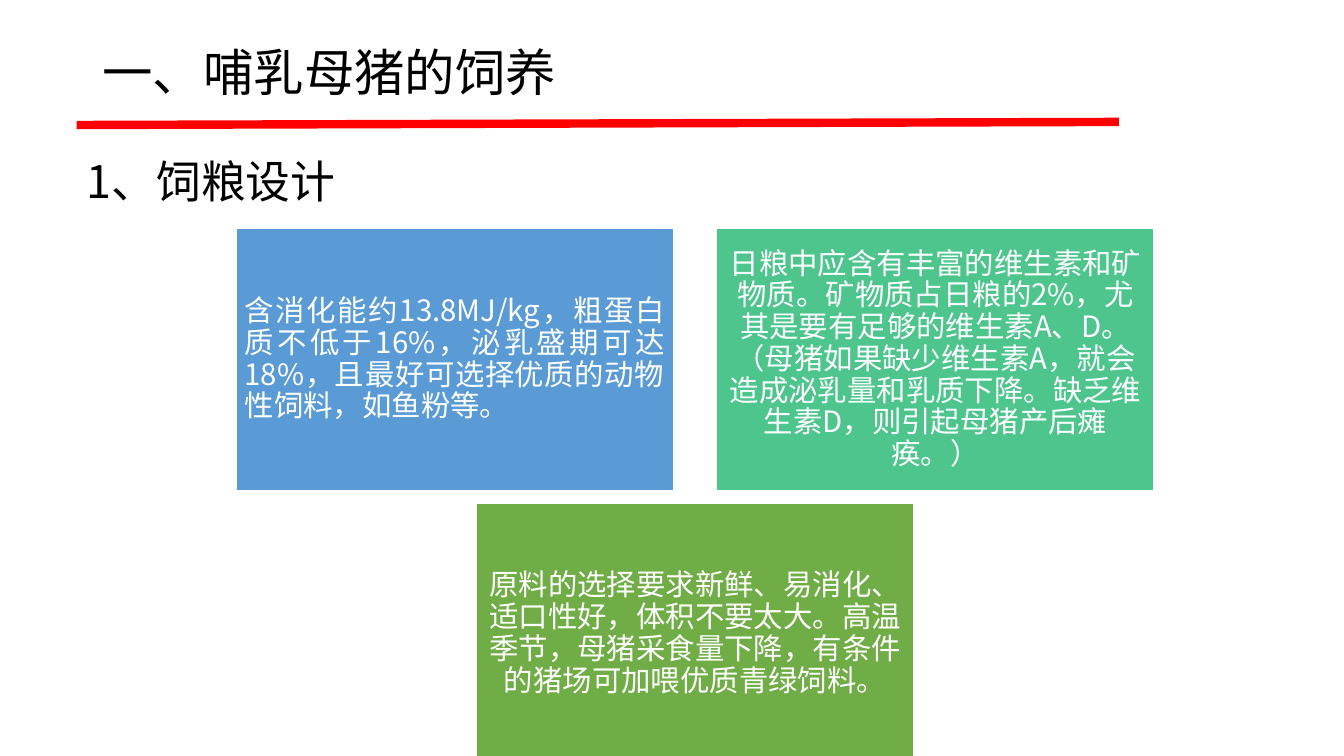
from dataclasses import dataclass

from lxml import etree
from pptx import Presentation
from pptx import util as u
from pptx.dml.color import RGBColor
from pptx.enum import shapes, text
from pptx.oxml import ns


@dataclass(frozen=True)
class Theme:
    font: str = "Noto Sans CJK SC"
    ink: str = "000000"
    paper: str = "FFFFFF"
    rule: str = "FF0000"
    cards: tuple = ("5B9BD5", "4DC58D", "70AD47")
    heading: float = 36
    subheading: float = 32
    body: float = 21


THEME = Theme()
ALIGN = text.PP_ALIGN

# Card grid: two on top, the third centred below them
CARD_W, CARD_H = 312.5, 187.2
GRID_LEFT, GRID_TOP = 168.5, 163.4
COLUMN_STEP, ROW_STEP = 343.5, 195.9

CARDS = [
    (0, 0, ALIGN.JUSTIFY,
     "含消化能约13.8MJ/kg，粗蛋白质不低于16%，泌乳盛期可达18%，"
     "且最好可选择优质的动物性饲料，如鱼粉等。"),
    (1, 0, ALIGN.CENTER,
     "日粮中应含有丰富的维生素和矿物质。矿物质占日粮的2%，"
     "尤其是要有足够的维生素A、D。（母猪如果缺少维生素A，"
     "就会造成泌乳量和乳质下降。缺乏维生素D，则引起母猪产后瘫痪。）"),
    (0.5, 1, ALIGN.CENTER,
     "原料的选择要求新鲜、易消化、适口性好，体积不要太大。"
     "高温季节，母猪采食量下降，有条件的猪场可加喂优质青绿饲料。"),
]


def apply(target, values):
    for name, value in values.items():
        setattr(target, name, value)


def points(*lengths):
    return [u.Pt(length) for length in lengths]


def write(box, words, size, color, align=ALIGN.LEFT, inset=(7.2, 3.6)):
    side, end = points(*inset)
    frame = box.text_frame
    apply(frame, {
        "word_wrap": True,
        "auto_size": text.MSO_AUTO_SIZE.NONE,
        "vertical_anchor": text.MSO_ANCHOR.MIDDLE,
        "margin_left": side, "margin_right": side,
        "margin_top": end, "margin_bottom": end,
    })
    para = frame.paragraphs[0]
    apply(para, {"alignment": align, "line_spacing": 0.9})
    span = para.add_run()
    span.text = words
    apply(span.font, {"size": u.Pt(size), "name": THEME.font})
    span.font.color.rgb = RGBColor.from_string(color)
    # East Asian typeface
    east = etree.SubElement(span.font._element, ns.qn("a:ea"))
    east.set("typeface", THEME.font)


def add_heading(page, words, size, *place):
    box = page.shapes.add_textbox(*points(*place))
    write(box, words, size, THEME.ink)


def add_rule(page, *ends):
    rule = page.shapes.add_connector(shapes.MSO_CONNECTOR.STRAIGHT, *points(*ends))
    rule.line.color.rgb = RGBColor.from_string(THEME.rule)
    rule.line.width = u.Pt(6)
    etree.SubElement(rule._element.spPr, ns.qn("a:effectLst"))


def add_card(page, column, row, align, words, fill):
    place = (GRID_LEFT + column * COLUMN_STEP, GRID_TOP + row * ROW_STEP, CARD_W, CARD_H)
    card = page.shapes.add_shape(shapes.MSO_SHAPE.RECTANGLE, *points(*place))
    card.shadow.inherit = False
    card.fill.solid()
    card.fill.fore_color.rgb = RGBColor.from_string(fill)
    card.line.color.rgb = RGBColor.from_string(THEME.paper)
    card.line.width = u.Pt(1)
    write(card, words, THEME.body, THEME.paper, align, inset=(6.3, 6.3))


def main():
    deck = Presentation()
    apply(deck, {"slide_width": u.Pt(960), "slide_height": u.Pt(540)})
    page = deck.slides.add_slide(deck.slide_layouts[6])

    # Headings and red rule
    add_heading(page, "1、饲粮设计", THEME.subheading, 54.7, 99.4, 553, 64)
    add_rule(page, 54.7, 89.3, 799.2, 87.1)
    add_heading(page, "一、哺乳母猪的饲养", THEME.heading, 66.2, 1.4, 828, 104.4)

    # Feed design cards
    for card, fill in zip(CARDS, THEME.cards):
        add_card(page, *card, fill)

    deck.save("out.pptx")


if __name__ == "__main__":
    main()
